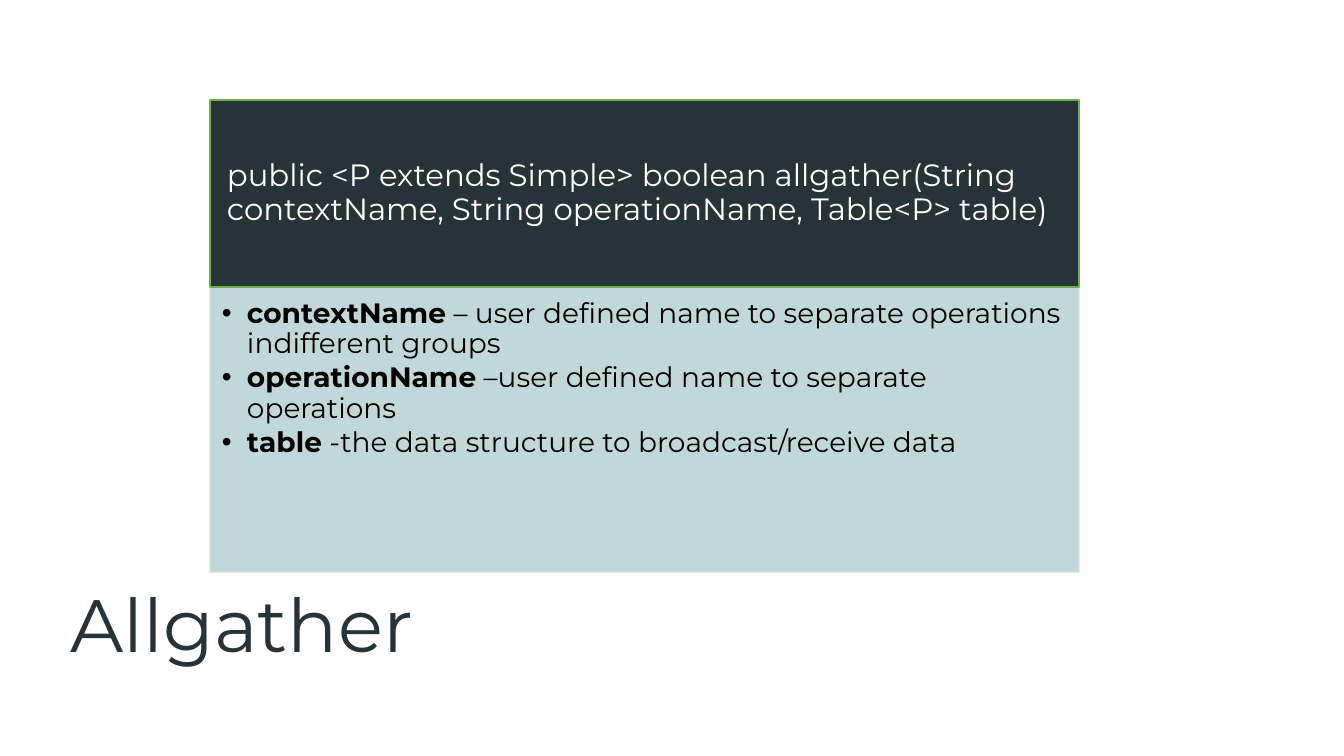
"""Build the Allgather slide: a method signature above its parameter list."""
from pptx import Presentation
from pptx.dml.color import RGBColor as RGB
from pptx.enum.shapes import MSO_SHAPE as SHAPE
from pptx.enum.text import MSO_ANCHOR as ANCHOR, MSO_AUTO_SIZE as AUTOSIZE, PP_ALIGN as ALIGN
from pptx.oxml.ns import qn
from pptx.util import Pt
from lxml.etree import SubElement

SCALE = 914400 / 100.8
THEME = {
    "font": "Montserrat",
    "dark": "263338", "green": "70AD47", "panel": "BCD3D6",
    "edge": "D5E3CF", "white": "FFFFFF", "black": "000000",
    "title": 53, "signature": 22, "list": 20,
}
LEFT, WIDTH = 210, 869
HEADER_TOP, HEADER_HEIGHT, PANEL_HEIGHT = 100, 187, 285
INDENT = 25
PARAMETERS = [
    ("contextName", " – user defined name to separate operations indifferent groups"),
    ("operationName", " –user defined name to separate operations"),
    ("table", " -the data structure to broadcast/receive data"),
]


def px(n):
    return round(n * SCALE)


def setup(sp, box, insets, anchor, fill=None, line=None):
    sp.left, sp.top, sp.width, sp.height = map(px, box)
    tf = sp.text_frame
    tf.word_wrap, tf.auto_size, tf.vertical_anchor = True, AUTOSIZE.NONE, anchor
    tf.margin_left, tf.margin_top, tf.margin_right, tf.margin_bottom = map(px, insets)
    if fill:
        sp.fill.solid()
        sp.fill.fore_color.rgb = RGB.from_string(THEME[fill])
        sp.line.color.rgb = RGB.from_string(THEME[line])
        sp.line.width = Pt(1)
    return tf


prs = Presentation()
prs.slide_width, prs.slide_height = px(1344), px(756)
s = prs.slides.add_slide(prs.slide_layouts[1])
title, panel = s.placeholders
header = s.shapes.add_shape(SHAPE.RECTANGLE, 0, 0, 0, 0)
header.shadow.inherit = False

title_tf = setup(title, (60, 588, 1159, 146), (10, 0, 10, 5), ANCHOR.TOP)
title_tf.text = "Allgather"

header_tf = setup(header, (LEFT, HEADER_TOP, WIDTH, HEADER_HEIGHT), (17, 10, 17, 10),
                  ANCHOR.MIDDLE, "dark", "green")
header_tf.text = ("public <P extends Simple> boolean allgather(String contextName, "
                  "String operationName, Table<P> table)")

panel_tf = setup(panel, (LEFT, HEADER_TOP + HEADER_HEIGHT, WIDTH, PANEL_HEIGHT),
                 (12, 12, 16, 17), ANCHOR.TOP, "panel", "edge")
for color in panel.element.spPr.iter(qn("a:srgbClr")):
    SubElement(color, qn("a:alpha"), val="90000")

for i, (name, meaning) in enumerate(PARAMETERS):
    p = panel_tf.paragraphs[0] if i == 0 else panel_tf.add_paragraph()
    for text, bold in ((name, True), (meaning, False)):
        r = p.add_run()
        r.text, r.font.bold = text, bold
    p.space_after = Pt(3)
    pPr = p._p.get_or_add_pPr()
    pPr.set("marL", str(px(INDENT)))
    pPr.set("indent", str(-px(INDENT)))
    SubElement(pPr, qn("a:buFont"), typeface="Arial")
    SubElement(pPr, qn("a:buChar"), char="•")

for tf, size, color in ((title_tf, "title", "dark"), (header_tf, "signature", "white"),
                        (panel_tf, "list", "black")):
    for p in tf.paragraphs:
        p.alignment, p.line_spacing, p.space_before = ALIGN.LEFT, 0.9, Pt(0)
        for r in p.runs:
            r.font.name, r.font.size = THEME["font"], Pt(THEME[size])
            r.font.color.rgb = RGB.from_string(THEME[color])

prs.save("out.pptx")
